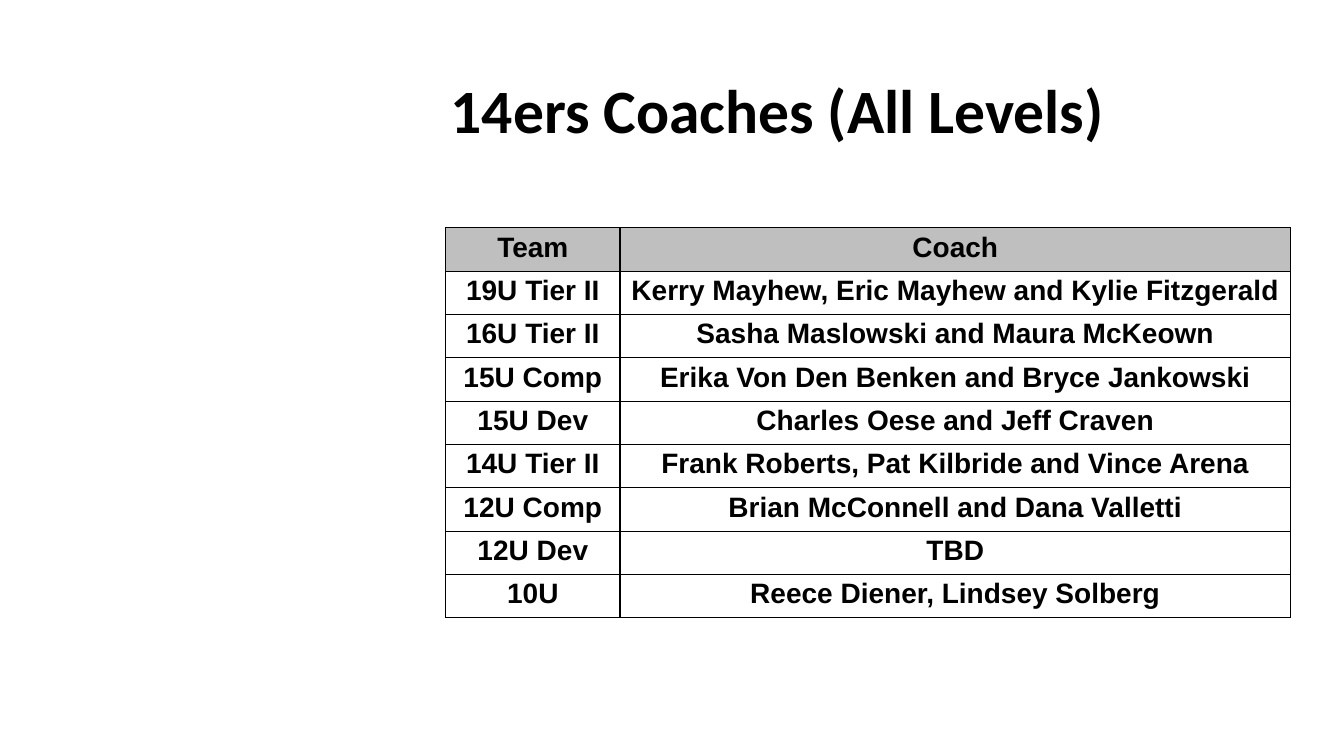
from dataclasses import dataclass

from lxml import etree
from pptx import Presentation
from pptx.dml.color import RGBColor
from pptx.enum.text import MSO_ANCHOR, PP_ALIGN
from pptx.oxml.ns import qn
from pptx.util import Inches, Pt

MIDDLE = MSO_ANCHOR.MIDDLE
LEFT, CENTER = PP_ALIGN.LEFT, PP_ALIGN.CENTER
BLANK_LAYOUT = 6


@dataclass(frozen=True)
class Theme:
    ink: str = "000000"
    paper: str = "FFFFFF"
    header_fill: str = "BFBFBF"
    title_font: str = "Calibri"
    table_font: str = "Arial"
    title_size: int = 44
    table_size: int = 20
    border_width: int = 1


ROSTER = [
    ("Team", "Coach"),
    ("19U Tier II", "Kerry Mayhew, Eric Mayhew and Kylie Fitzgerald"),
    ("16U Tier II", "Sasha Maslowski and Maura McKeown"),
    ("15U Comp", "Erika Von Den Benken and Bryce Jankowski"),
    ("15U Dev", "Charles Oese and Jeff Craven"),
    ("14U Tier II", "Frank Roberts, Pat Kilbride and Vince Arena"),
    ("12U Comp", "Brian McConnell and Dana Valletti"),
    ("12U Dev", "TBD"),
    ("10U", "Reece Diener, Lindsey Solberg"),
]
COLUMN_WIDTHS = (1.73, 6.65)
ROW_HEIGHT = 0.43


def set_attributes(target, values):
    for key, value in values.items():
        setattr(target, key, value)


class SlideBuilder:
    def __init__(self, slide, theme):
        self.slide = slide
        self.theme = theme

    def background(self):
        fill = self.slide.background.fill
        fill.solid()
        fill.fore_color.rgb = RGBColor.from_string(self.theme.paper)

    def text_line(self, frame, text, font_name, size, align):
        line = frame.paragraphs[0]
        line.text = text
        line.alignment = align
        set_attributes(line.font, {"name": font_name, "size": Pt(size), "bold": True})
        line.font.color.rgb = RGBColor.from_string(self.theme.ink)
        return line

    def title(self, text, left, top, width, height):
        box = self.slide.shapes.add_textbox(
            Inches(left), Inches(top), Inches(width), Inches(height))
        inset = Inches(0.05)
        set_attributes(box.text_frame, {
            "word_wrap": True, "vertical_anchor": MIDDLE,
            "margin_left": inset, "margin_right": inset,
            "margin_top": inset, "margin_bottom": inset})
        heading = self.text_line(box.text_frame, text, self.theme.title_font,
                                 self.theme.title_size, LEFT)
        heading.line_spacing = 0.9

    def border(self, cell):
        properties = cell._tc.get_or_add_tcPr()
        # Border lines come before the fill in the cell properties
        for position, side in enumerate(("lnL", "lnR", "lnT", "lnB")):
            edge = etree.Element(qn(f"a:{side}"), w=str(Pt(self.theme.border_width)))
            paint = etree.SubElement(edge, qn("a:solidFill"))
            etree.SubElement(paint, qn("a:srgbClr"), val=self.theme.ink)
            properties.insert(position, edge)

    def table(self, rows, left, top, column_widths, row_height):
        grid = self.slide.shapes.add_table(
            len(rows), len(column_widths), Inches(left), Inches(top),
            Inches(sum(column_widths)), Inches(row_height * len(rows))).table
        set_attributes(grid, {"first_row": False, "horz_banding": False})
        for column, width in zip(grid.columns, column_widths):
            column.width = Inches(width)
        for r, entries in enumerate(rows):
            grid.rows[r].height = Inches(row_height)
            color = self.theme.paper if r else self.theme.header_fill
            for c, text in enumerate(entries):
                cell = grid.cell(r, c)
                set_attributes(cell, {
                    "margin_left": Inches(0.05), "margin_right": Inches(0.05),
                    "margin_top": Inches(0.04), "margin_bottom": Inches(0.04)})
                self.text_line(cell.text_frame, text, self.theme.table_font,
                               self.theme.table_size, CENTER)
                cell.fill.solid()
                cell.fill.fore_color.rgb = RGBColor.from_string(color)
                self.border(cell)


def main():
    deck = Presentation()
    set_attributes(deck, {"slide_width": Inches(13.33), "slide_height": Inches(7.5)})
    slide = deck.slides.add_slide(deck.slide_layouts[BLANK_LAYOUT])
    builder = SlideBuilder(slide, Theme())
    builder.background()

    # Heading
    builder.title("14ers Coaches (All Levels)", 4.42, 0.4, 8.18, 1.45)

    # Coaches by team
    builder.table(ROSTER, 4.42, 2.26, COLUMN_WIDTHS, ROW_HEIGHT)

    deck.save("out.pptx")


if __name__ == "__main__":
    main()
